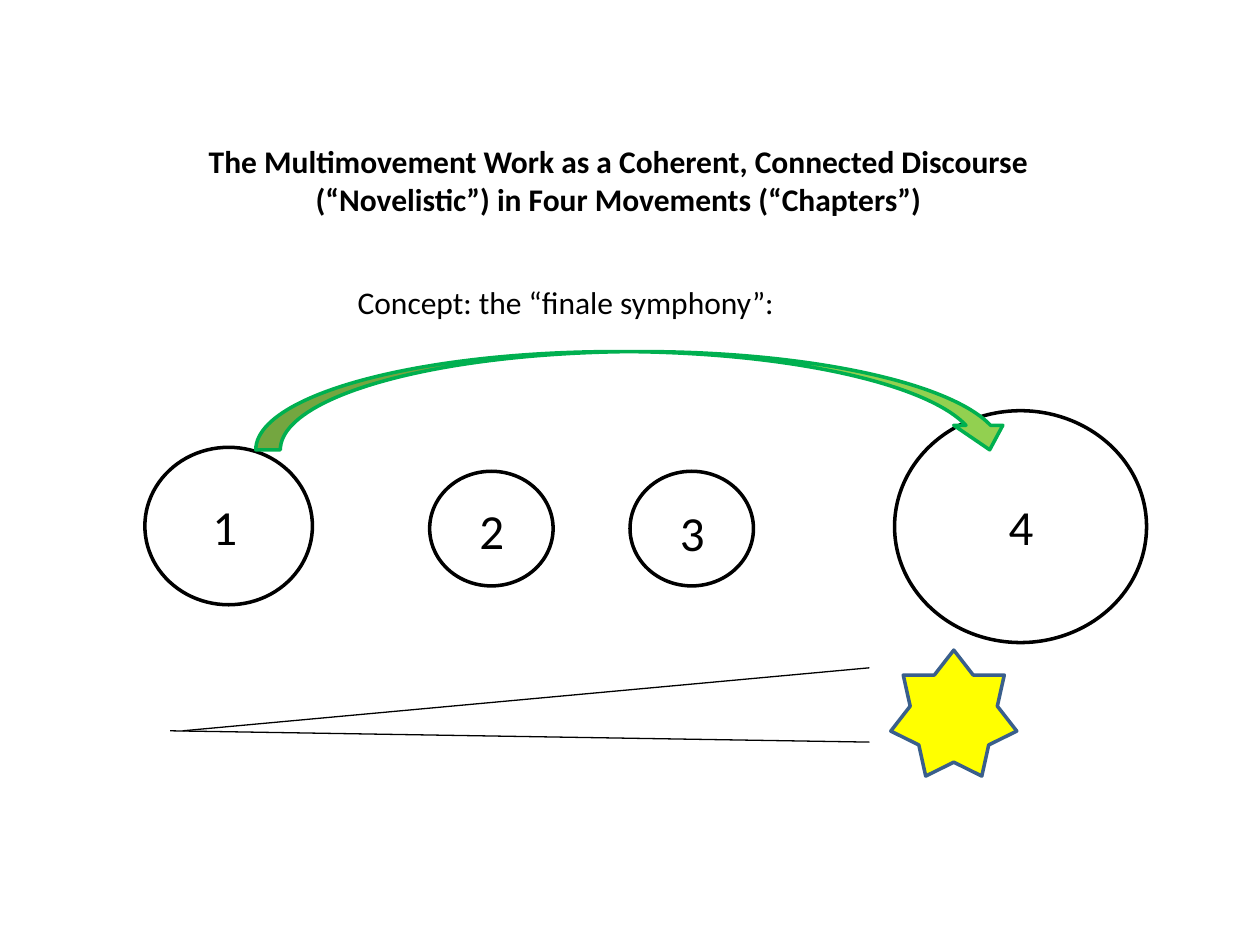
from pptx import Presentation
from pptx.dml.color import RGBColor
from pptx.enum.shapes import MSO_CONNECTOR, MSO_SHAPE
from pptx.enum.text import MSO_AUTO_SIZE, PP_ALIGN
from pptx.oxml.ns import qn
from pptx.util import Inches, Pt
from lxml.etree import SubElement

# Content: text, then left, top, width, height in inches
TITLE = ("The Multimovement Work as a Coherent, Connected Discourse "
         "(“Novelistic”) in Four Movements (“Chapters”)")
CONCEPT = "Concept: the “finale symphony”:"

# Movements: number, circle box, label left and top
MOVES = [
    ("1", (1.15, 3.55, 1.33, 1.25), (1.53, 3.89)),
    ("2", (3.41, 3.74, 0.98, 0.91), (3.65, 3.92)),
    ("3", (5, 3.74, 0.98, 0.91), (5.24, 3.94)),
    ("4", (7.1, 3.26, 2, 1.84), (7.85, 3.89)),
]
LABEL = (0.5, 0.57)

# Crescendo wedge: start and end of each line
WEDGE = [
    ((1.45, 5.8), (6.9, 5.3)),
    ((1.35, 5.8), (6.9, 5.89)),
]
STAR = (7.07, 5.16, 1, 1)
ARC = (4.65, 0.17, 0.78, 6.02)

deck = Presentation()
deck.slide_width, deck.slide_height = Inches(10), Inches(7.5)
slide = deck.slides.add_slide(deck.slide_layouts[6])


def color(code):
    return RGBColor.from_string(code)


def inch(values):
    return [Inches(v) for v in values]


def text(runs, box, bold=False, align=PP_ALIGN.LEFT):
    """Add a text box from (words, size) runs."""
    frame = slide.shapes.add_textbox(*inch(box)).text_frame
    frame.word_wrap = True
    frame.auto_size = MSO_AUTO_SIZE.SHAPE_TO_FIT_TEXT
    para = frame.paragraphs[0]
    para.alignment = align
    for words, size in runs:
        run = para.add_run()
        run.text = words
        font = run.font
        font.name, font.size, font.bold = "Calibri", Pt(size), bold
        font.color.rgb = color("000000")


def shape(kind, box, line="000000", fill=None, turn=0):
    item = slide.shapes.add_shape(kind, *inch(box))
    item.shadow.inherit = False
    item.rotation = turn
    item.line.color.rgb = color(line)
    item.line.width = Pt(2)
    if fill:
        item.fill.solid()
        item.fill.fore_color.rgb = color(fill)
    else:
        item.fill.background()


def line(start, end):
    item = slide.shapes.add_connector(
        MSO_CONNECTOR.STRAIGHT, *inch(start + end))
    item.line.color.rgb = color("000000")
    item.line.width = Pt(0.75)
    SubElement(item._element.spPr, qn("a:effectLst"))


# Heading
text([(TITLE, 18)], (1.16, 1.08, 7.5, 0.71), bold=True, align=PP_ALIGN.CENTER)

# Movement circles and their numbers
for number, ring, spot in MOVES:
    shape(MSO_SHAPE.OVAL, ring)
    text([(" ", 18), (number, 28)], spot + LABEL)

# Wedge that leads to the star
for start, end in WEDGE:
    line(start, end)
shape(MSO_SHAPE.STAR_7_POINT, STAR, line="3A5F8C", fill="FFFF00")

# Concept and the arc from first to last movement
text([(CONCEPT, 18)], (2.74, 2.2, 3.7, 0.4))
shape(MSO_SHAPE.CURVED_LEFT_ARROW, ARC, line="00B050", fill="92D050", turn=270)

deck.save("out.pptx")
